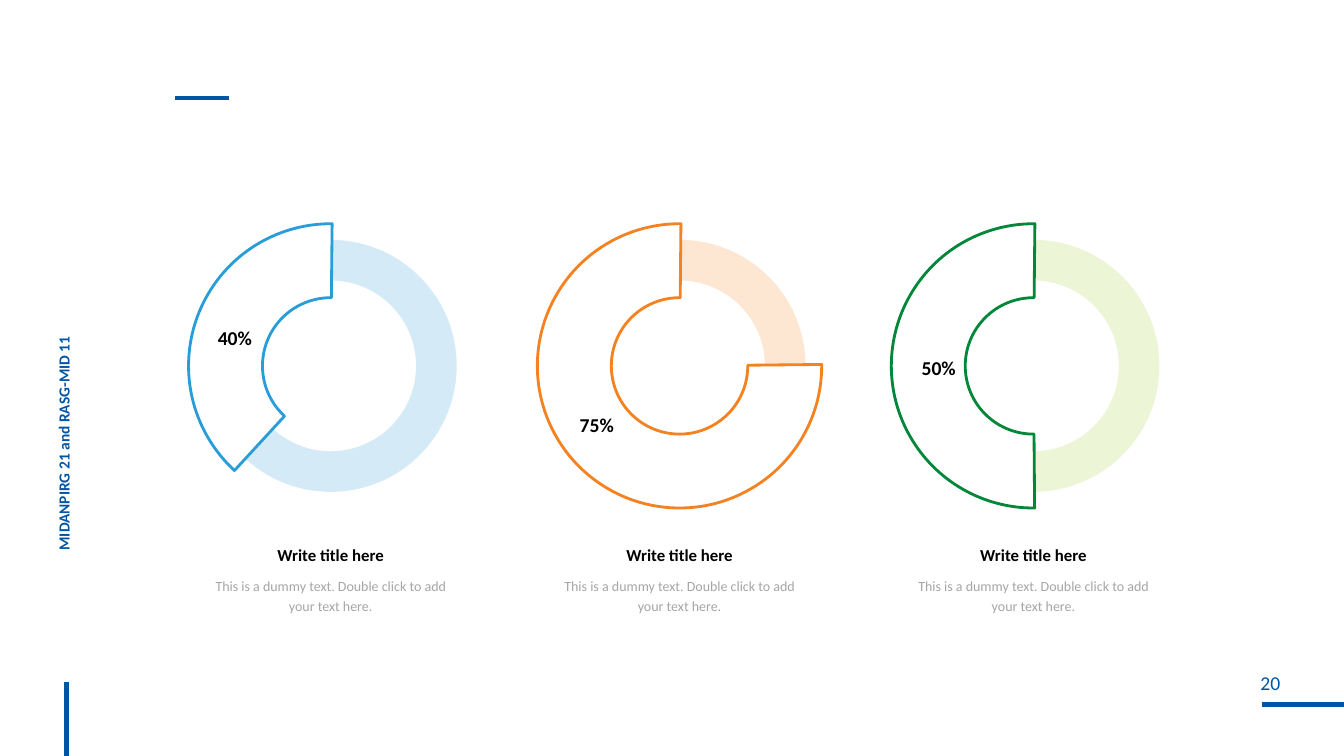
from dataclasses import dataclass

from lxml.etree import SubElement
from pptx import Presentation
from pptx.dml.color import RGBColor
from pptx.enum.shapes import MSO_CONNECTOR, MSO_SHAPE
from pptx.enum.text import MSO_ANCHOR, PP_ALIGN
from pptx.oxml.ns import qn
from pptx.util import Inches, Pt

BLUE, BLACK, WHITE, GREY = "0055A5", "000000", "FFFFFF", "A6A6A6"
RING_TOP, RING_SIZE, RING_WIDTH = 2.38, 2.5, 0.161
ARC_OUTSET, ARC_WIDTH, ARC_END = 0.16, 0.26, 270.57
ANGLE_UNIT = 0.6  # adjustment value per degree
CAPTION_TOP = 5.32


@dataclass
class Gauge:
    left: float
    label: str
    label_left: float
    label_top: float
    start: float
    color: str
    tint: str


@dataclass
class Line:
    text: str
    size: float
    color: str
    bold: bool = False
    align: PP_ALIGN = PP_ALIGN.CENTER
    spacing: float = 1.0
    before: float = 0


GAUGES = [
    Gauge(2.03, "40%", 2.12, 3.18, 132.6, "289DD8", "D4EBF7"),
    Gauge(5.49, "75%", 5.71, 4.05, 359.43, "F58220", "FDE6D2"),
    Gauge(9, "50%", 9.1, 3.48, 89.54, "008739", "EDF5D7"),
]
RULES = [
    (12.52, 6.99, 13.33, 6.99),
    (0.66, 6.77, 0.66, 7.5),
    (1.74, 0.97, 2.27, 0.97),
]


def rgb(color: str) -> RGBColor:
    return RGBColor.from_string(color)


def add_rule(s, x1: float, y1: float, x2: float, y2: float) -> None:
    line = s.shapes.add_connector(
        MSO_CONNECTOR.STRAIGHT, Inches(x1), Inches(y1), Inches(x2), Inches(y2))
    line.line.color.rgb = rgb(BLUE)
    line.line.width = Pt(3)
    SubElement(line._element.spPr, qn("a:effectLst"))


def add_text(s, left: float, top: float, width: float, height: float,
             lines: list[Line], margin_x: float = 0, margin_y: float = 0.05,
             wrap: bool = True, rotation: float = 0) -> None:
    sp = s.shapes.add_textbox(
        Inches(left), Inches(top), Inches(width), Inches(height))
    sp.rotation = rotation
    tf = sp.text_frame
    frame = {
        "word_wrap": wrap, "vertical_anchor": MSO_ANCHOR.TOP,
        "margin_left": Inches(margin_x), "margin_right": Inches(margin_x),
        "margin_top": Inches(margin_y), "margin_bottom": Inches(margin_y),
    }
    for name, value in frame.items():
        setattr(tf, name, value)
    for i, line in enumerate(lines):
        p = tf.add_paragraph() if i else tf.paragraphs[0]
        p.alignment = line.align
        p.line_spacing = line.spacing
        p.space_before = Pt(line.before)
        r = p.add_run()
        r.text = line.text
        font = {"name": "Calibri", "size": Pt(line.size), "bold": line.bold}
        for name, value in font.items():
            setattr(r.font, name, value)
        r.font.color.rgb = rgb(line.color)


def add_ring(s, kind: MSO_SHAPE, left: float, top: float, size: float,
             adjustments: list[float], fill: str, outline: str = "") -> None:
    sp = s.shapes.add_shape(
        kind, Inches(left), Inches(top), Inches(size), Inches(size))
    sp.shadow.inherit = False
    for i, value in enumerate(adjustments):
        sp.adjustments[i] = value
    sp.fill.solid()
    sp.fill.fore_color.rgb = rgb(fill)
    if outline:
        sp.line.color.rgb = rgb(outline)
        sp.line.width = Pt(2)
    else:
        sp.line.fill.background()


def add_gauge(s, g: Gauge) -> None:
    add_ring(s, MSO_SHAPE.DONUT, g.left, RING_TOP, RING_SIZE,
             [RING_WIDTH], g.tint)
    add_ring(s, MSO_SHAPE.BLOCK_ARC, g.left - ARC_OUTSET,
             RING_TOP - ARC_OUTSET, RING_SIZE + 2 * ARC_OUTSET,
             [g.start * ANGLE_UNIT, ARC_END * ANGLE_UNIT, ARC_WIDTH],
             WHITE, g.color)
    add_text(s, g.label_left, g.label_top, 0.38, 0.34,
             [Line(g.label, 14, BLACK, True, PP_ALIGN.RIGHT)], wrap=False)
    add_text(s, g.left, CAPTION_TOP, RING_SIZE, 0.83, [
        Line("Write title here", 12, BLACK, True, spacing=1.2),
        Line("This is a dummy text. Double click to add your text here.",
             10, GREY, spacing=1.2, before=6),
    ])


def main() -> None:
    prs = Presentation()
    prs.slide_width, prs.slide_height = Inches(13.33), Inches(7.5)
    s = prs.slides.add_slide(prs.slide_layouts[6])
    for rule in RULES:
        add_rule(s, *rule)
    add_text(s, 12, 6.66, 1.2, 0.33, [Line("20", 14, BLUE)],
             margin_y=0, wrap=False)
    add_text(s, -1.9, 2.83, 5.14, 0.32,
             [Line("MIDANPIRG 21 and RASG-MID 11", 11, BLUE, True,
                   PP_ALIGN.LEFT, 0.9)],
             margin_x=0.1, rotation=270)
    for gauge in GAUGES:
        add_gauge(s, gauge)
    prs.save("out.pptx")


if __name__ == "__main__":
    main()
